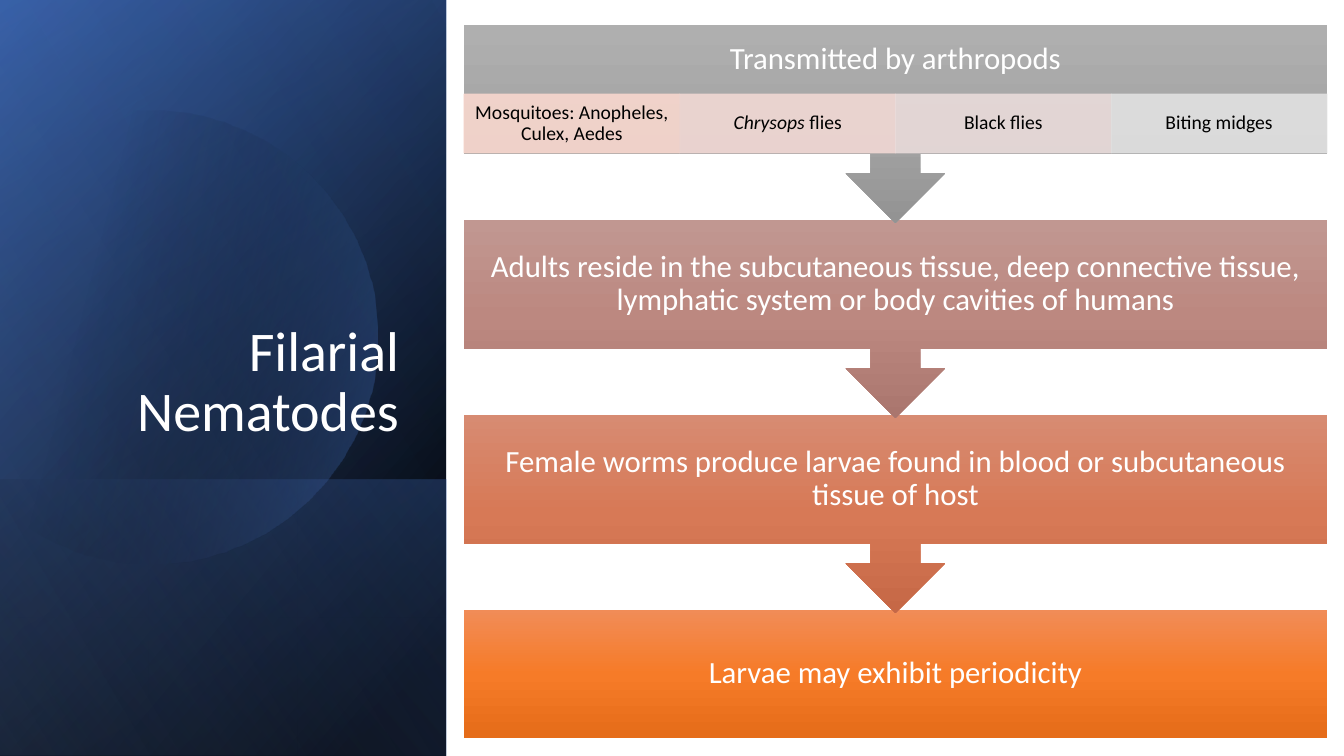
import math
from dataclasses import dataclass

import lxml.etree
import pptx
import pptx.dml.color
import pptx.enum.shapes
import pptx.enum.text
import pptx.oxml.ns
import pptx.util

SLIDE_WIDTH, SLIDE_HEIGHT = 1344, 756
EMU_PER_PX = 12192000 / SLIDE_WIDTH
FONT = "Calibri"
COLORS = {
    "white": "FFFFFF", "black": "000000",
    "navy": "2F5597", "blue": "4472C4", "pale blue": "8FAADC",
    "gray light": "AFAFAF", "gray": "A5A5A5", "gray dark": "939393",
    "rose light": "C19791", "rose": "BC8880", "rose dark": "AA766E",
    "clay light": "D78B72", "clay": "D77956", "clay dark": "C66846",
    "orange light": "F18C57", "orange": "F67B28", "orange dark": "E56C19",
    "peach": "F8D7CE", "blush": "F1D8D4", "mauve": "E9DBDA", "silver": "E1E1E1",
}
RECTANGLE = pptx.enum.shapes.MSO_SHAPE.RECTANGLE
CALLOUT = pptx.enum.shapes.MSO_SHAPE.DOWN_ARROW_CALLOUT


@dataclass
class Stop:
    position: int
    color: str
    opacity: int = 100


@dataclass
class Layer:
    top: int
    angle: int
    stops: list[Stop]


@dataclass
class Step:
    text: str
    color: str


@dataclass
class Vector:
    runs: list[tuple[str, bool]]  # text, italic
    color: str


# Gradient layers of the left panel, from back to front
PANEL_WIDTH = 446
LAYERS = [
    Layer(0, 220, [Stop(8, "black"), Stop(100, "navy")]),
    Layer(0, 240, [Stop(0, "black", 0), Stop(99, "blue", 46)]),
    Layer(480, 140, [Stop(2, "blue", 29), Stop(100, "black", 30)]),
]
WASH = Layer(0, 150, [Stop(0, "black", 0), Stop(99, "pale blue", 11)])
DISC_STOPS = [Stop(29, "black", 0), Stop(100, "blue", 43)]
DISC_X, DISC_Y, DISC_RADIUS, DISC_CUT = 151, 337, 226, -15

# Flow of steps on the right
FLOW_LEFT, FLOW_TOP, FLOW_WIDTH, STEP_PITCH = 464, 25, 863, 195
BODY_HEIGHT, CALLOUT_HEIGHT, STEP_INSET = 128, 198, 17
VECTOR_TOP, VECTOR_HEIGHT = 94, 59
STEPS = [
    Step("Transmitted by arthropods", "gray"),
    Step("Adults reside in the subcutaneous tissue, deep connective tissue, "
         "lymphatic system or body cavities of humans", "rose"),
    Step("Female worms produce larvae found in blood or subcutaneous tissue of host", "clay"),
    Step("Larvae may exhibit periodicity", "orange"),
]
VECTORS = [
    Vector([("Mosquitoes: Anopheles, Culex, Aedes", False)], "peach"),
    Vector([("Chrysops", True), (" flies", False)], "blush"),
    Vector([("Black flies", False)], "mauve"),
    Vector([("Biting midges", False)], "silver"),
]


def px(length: float) -> pptx.util.Emu:
    return pptx.util.Emu(round(length * EMU_PER_PX))


def rgb(name: str) -> pptx.dml.color.RGBColor:
    return pptx.dml.color.RGBColor.from_string(COLORS[name])


def child(parent, tag: str, **attributes: str):
    return lxml.etree.SubElement(parent, pptx.oxml.ns.qn(tag), attributes)


def set_gradient(shape, stops: list[Stop], angle: int) -> None:
    shape.shadow.inherit = False
    shape.line.fill.background()
    shape.fill.gradient()
    gradient = shape.element.spPr.find(pptx.oxml.ns.qn("a:gradFill"))
    for element in list(gradient):
        gradient.remove(element)
    stop_list = child(gradient, "a:gsLst")
    for stop in stops:
        entry = child(stop_list, "a:gs", pos=str(stop.position * 1000))
        color = child(entry, "a:srgbClr", val=COLORS[stop.color])
        if stop.opacity < 100:
            child(color, "a:alpha", val=str(stop.opacity * 1000))
    child(gradient, "a:lin", ang=str(angle * 60000), scaled="0")


def add_box(slide, kind, left: float, top: float, width: float, height: float):
    return slide.shapes.add_shape(kind, px(left), px(top), px(width), px(height))


def set_insets(frame, side: int, top: int, bottom: int) -> None:
    frame.margin_left = frame.margin_right = px(side)
    frame.margin_top, frame.margin_bottom = px(top), px(bottom)


def format_text(frame, size: int, color: str, alignment, anchor) -> None:
    frame.word_wrap = True
    frame.auto_size = pptx.enum.text.MSO_AUTO_SIZE.NONE
    frame.vertical_anchor = anchor
    for paragraph in frame.paragraphs:
        paragraph.alignment = alignment
        paragraph.line_spacing = 0.9
        paragraph.font.name = FONT
        paragraph.font.size = pptx.util.Pt(size)
        paragraph.font.color.rgb = rgb(color)


def format_centered(frame, size: int, color: str) -> None:
    format_text(frame, size, color, pptx.enum.text.PP_ALIGN.CENTER,
                pptx.enum.text.MSO_ANCHOR.MIDDLE)


def add_layer(slide, layer: Layer) -> None:
    shape = add_box(slide, RECTANGLE, 0, layer.top, PANEL_WIDTH, SLIDE_HEIGHT - layer.top)
    set_gradient(shape, layer.stops, layer.angle)


def add_disc(slide) -> None:
    """Draw a disc whose left side is cut by a vertical chord."""
    limit = math.acos((DISC_CUT - DISC_X) / DISC_RADIUS)
    count = 120
    angles = [limit * (2 * index / count - 1) for index in range(count + 1)]
    points = [(DISC_X + DISC_RADIUS * math.cos(angle), DISC_Y + DISC_RADIUS * math.sin(angle))
              for angle in angles]
    builder = slide.shapes.build_freeform(*points[0], scale=EMU_PER_PX)
    builder.add_line_segments(points[1:], close=True)
    set_gradient(builder.convert_to_shape(), DISC_STOPS, 14)


def add_title(slide, text: str) -> None:
    title = slide.shapes.title
    title.element.getparent().append(title.element)  # bring in front of the panel
    title.left, title.top, title.width, title.height = px(65), px(185), px(344), px(264)
    title.text_frame.text = text
    format_text(title.text_frame, 40, "white", pptx.enum.text.PP_ALIGN.RIGHT,
                pptx.enum.text.MSO_ANCHOR.BOTTOM)


def add_step(slide, index: int, step: Step) -> None:
    is_last = index == len(STEPS) - 1
    kind, height = (RECTANGLE, BODY_HEIGHT) if is_last else (CALLOUT, CALLOUT_HEIGHT)
    shape = add_box(slide, kind, FLOW_LEFT, FLOW_TOP + index * STEP_PITCH, FLOW_WIDTH, height)
    shades = [Stop(0, f"{step.color} light"), Stop(50, step.color), Stop(100, f"{step.color} dark")]
    set_gradient(shape, shades, 90)
    shape.text_frame.text = step.text
    # The first step leaves room for the row of vectors
    extra = VECTOR_HEIGHT if index == 0 else 0
    set_insets(shape.text_frame, STEP_INSET, STEP_INSET, STEP_INSET + extra)
    format_centered(shape.text_frame, 22, "white")


def add_vector(slide, index: int, vector: Vector) -> None:
    width = FLOW_WIDTH / len(VECTORS)
    shape = add_box(slide, RECTANGLE, FLOW_LEFT + index * width, VECTOR_TOP, width, VECTOR_HEIGHT)
    shape.shadow.inherit = False
    shape.fill.solid()
    shape.fill.fore_color.rgb = rgb(vector.color)
    shape.line.color.rgb = rgb(vector.color)
    shape.line.width = pptx.util.Pt(0.5)
    for color in shape.element.spPr.iter(pptx.oxml.ns.qn("a:srgbClr")):
        child(color, "a:alpha", val="90000")
    for text, italic in vector.runs:
        run = shape.text_frame.paragraphs[0].add_run()
        run.text = text
        if italic:
            run.font.italic = True
    set_insets(shape.text_frame, 11, 2, 2)
    format_centered(shape.text_frame, 14, "black")


def main() -> None:
    presentation = pptx.Presentation()
    presentation.slide_width, presentation.slide_height = px(SLIDE_WIDTH), px(SLIDE_HEIGHT)
    slide = presentation.slides.add_slide(presentation.slide_layouts[5])
    # Left panel
    for layer in LAYERS:
        add_layer(slide, layer)
    add_disc(slide)
    add_layer(slide, WASH)
    add_title(slide, "Filarial Nematodes")
    # Steps from last to first, so that each arrow tip lies on the next step
    for index, step in reversed(list(enumerate(STEPS))):
        add_step(slide, index, step)
    for index, vector in enumerate(VECTORS):
        add_vector(slide, index, vector)
    presentation.save("out.pptx")


if __name__ == "__main__":
    main()
